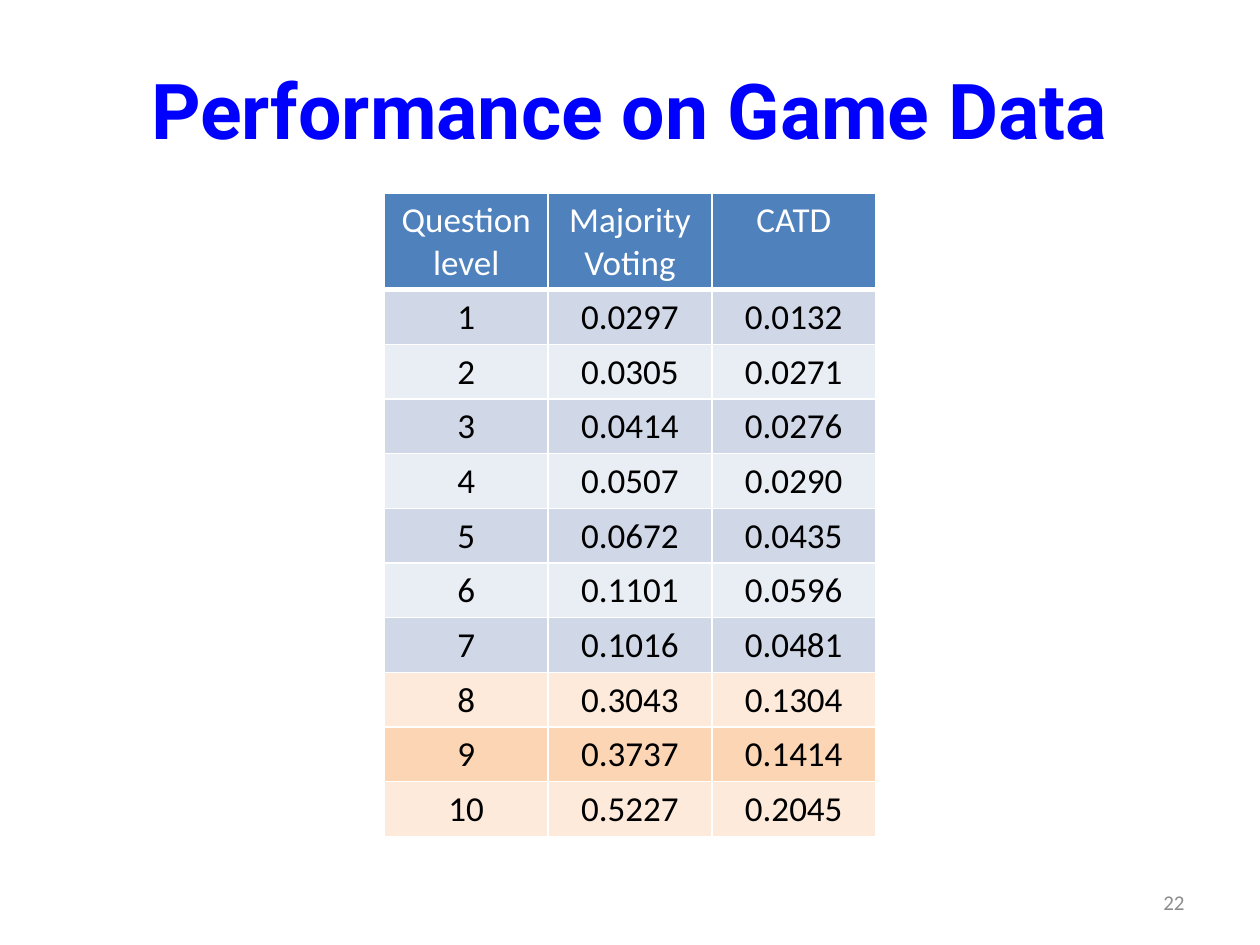
from lxml.etree import SubElement
from pptx import Presentation
from pptx.dml.color import RGBColor
from pptx.enum.text import MSO_ANCHOR, PP_ALIGN
from pptx.oxml.ns import qn
from pptx.util import Inches, Pt

WIDTH, HEIGHT = Inches(10), Inches(7.5)

TITLE_BLUE = RGBColor(0x00, 0x00, 0xFF)
NUMBER_GREY = RGBColor(0x8C, 0x8C, 0x8C)
WHITE = RGBColor(0xFF, 0xFF, 0xFF)
BLACK = RGBColor(0x00, 0x00, 0x00)
HEADER_BLUE = RGBColor(0x4F, 0x81, 0xBD)
BLUE_BANDS = RGBColor(0xD0, 0xD8, 0xE8), RGBColor(0xE9, 0xED, 0xF4)
ORANGE_BANDS = RGBColor(0xFC, 0xD5, 0xB5), RGBColor(0xFD, 0xEA, 0xDA)

FIRST_HARD_LEVEL = 8
COLUMN_WIDTH = Inches(1.3)
HEADER_HEIGHT, ROW_HEIGHT = Inches(0.77), Inches(0.43)

HEADINGS = ("Question level", "Majority Voting", "CATD")
ERROR_RATES = (
    ("0.0297", "0.0132"),
    ("0.0305", "0.0271"),
    ("0.0414", "0.0276"),
    ("0.0507", "0.0290"),
    ("0.0672", "0.0435"),
    ("0.1101", "0.0596"),
    ("0.1016", "0.0481"),
    ("0.3043", "0.1304"),
    ("0.3737", "0.1414"),
    ("0.5227", "0.2045"),
)


def write(frame, text, size, color, align, font="Calibri", bold=False):
    paragraph = frame.paragraphs[0]
    paragraph.alignment = align
    run = paragraph.add_run()
    run.text = text
    run.font.name = font
    run.font.size = Pt(size)
    run.font.bold = bold
    run.font.color.rgb = color


def add_label(slide, shares, text, size, color, align, **style):
    """Add a text box placed by left, top, width and height as shares of the slide."""
    left, top, width, height = shares
    label = slide.shapes.add_textbox(
        int(left * WIDTH), int(top * HEIGHT), int(width * WIDTH), int(height * HEIGHT)
    )
    frame = label.text_frame
    frame.word_wrap = True
    frame.vertical_anchor = MSO_ANCHOR.MIDDLE
    write(frame, text, size, color, align, **style)


def add_borders(cell, bottom):
    properties = cell._tc.get_or_add_tcPr()
    for side, points in (("L", 1), ("R", 1), ("T", 1), ("B", bottom)):
        line = SubElement(properties, qn(f"a:ln{side}"), w=str(Pt(points)))
        fill = SubElement(line, qn("a:solidFill"))
        SubElement(fill, qn("a:srgbClr"), val=str(WHITE))


def fill_row(cells, texts, background, color, bottom=1):
    for cell, text in zip(cells, texts):
        add_borders(cell, bottom)
        cell.fill.solid()
        cell.fill.fore_color.rgb = background
        write(cell.text_frame, text, 20, color, PP_ALIGN.CENTER)


def add_results_table(slide):
    columns, levels = len(HEADINGS), len(ERROR_RATES)
    width = columns * COLUMN_WIDTH
    table = slide.shapes.add_table(
        levels + 1, columns, (WIDTH - width) // 2, Inches(1.53),
        width, HEADER_HEIGHT + levels * ROW_HEIGHT,
    ).table
    for column in table.columns:
        column.width = COLUMN_WIDTH
    table.rows[0].height = HEADER_HEIGHT
    fill_row(table.rows[0].cells, HEADINGS, HEADER_BLUE, WHITE, bottom=3)
    for level, rates in enumerate(ERROR_RATES, start=1):
        row = table.rows[level]
        row.height = ROW_HEIGHT
        bands = BLUE_BANDS if level < FIRST_HARD_LEVEL else ORANGE_BANDS
        fill_row(row.cells, (str(level), *rates), bands[(level - 1) % 2], BLACK)


def main():
    deck = Presentation()
    deck.slide_width, deck.slide_height = WIDTH, HEIGHT
    slide = deck.slides.add_slide(deck.slide_layouts[6])
    add_label(slide, (-0.1, 0, 1.2, 0.23), "Performance on Game Data", 44,
              TITLE_BLUE, PP_ALIGN.CENTER, font="Roboto", bold=True)
    add_results_table(slide)
    add_label(slide, (0.72, 0.93, 0.23, 0.05), "22", 12, NUMBER_GREY, PP_ALIGN.RIGHT)
    deck.save("out.pptx")


if __name__ == "__main__":
    main()
